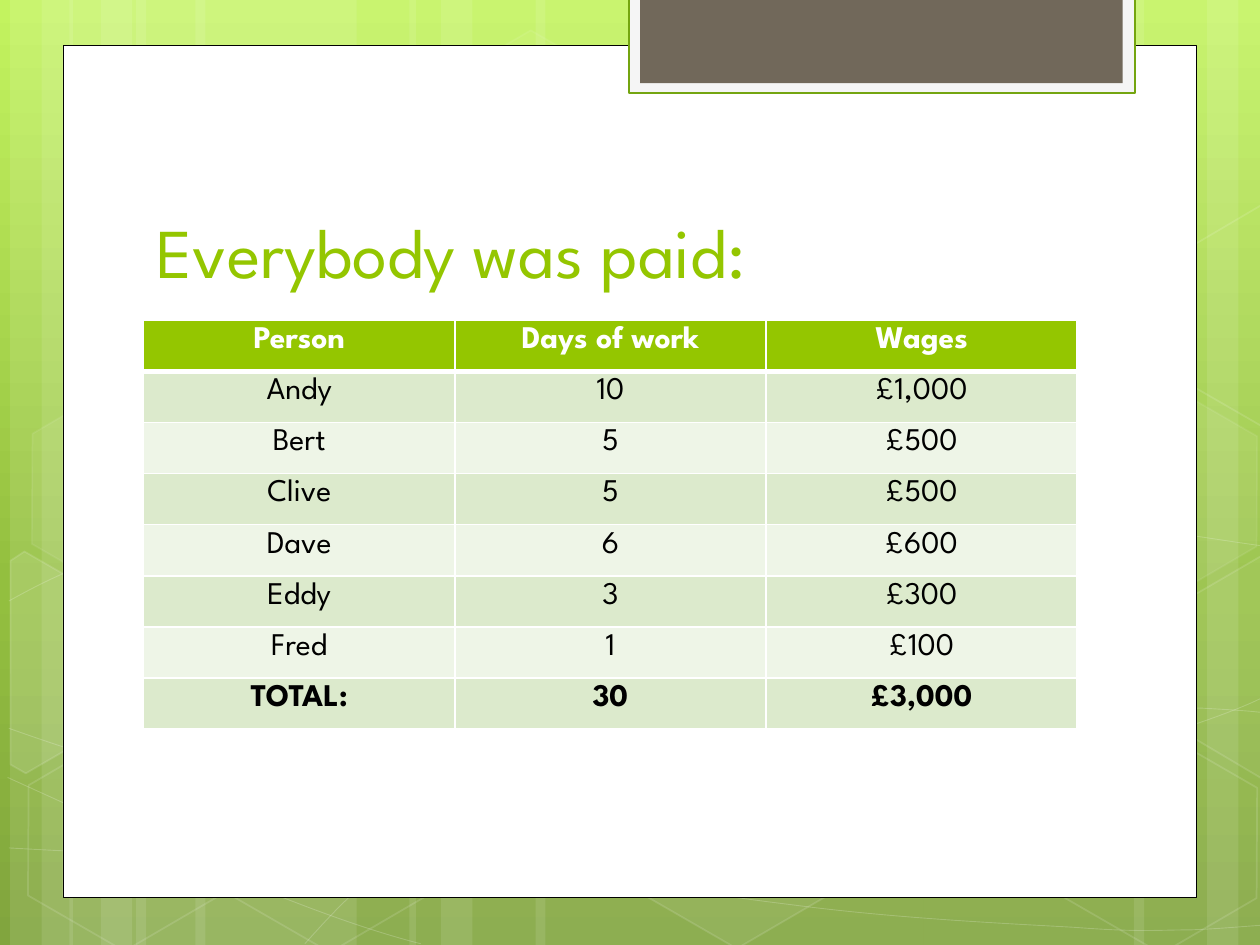
import copy
import math

import pptx
import pptx.dml.color
import pptx.enum.shapes
import pptx.enum.text
import pptx.oxml
import pptx.oxml.ns
import pptx.util

SCALE = 9144  # EMU per px, 100 px to the inch
FONT = "League Spartan"
COLOURS = {
    "white": "FFFFFF", "black": "000000", "green": "94C600", "outline": "74A510",
    "tab frame": "F5F5F5", "tab": "71685A", "odd row": "DCEACC", "even row": "EEF5E7",
    "sky": "C3F35F", "grass": "93BF3F", "moss": "81A53E",
}
RGB = {name: pptx.dml.color.RGBColor.from_string(value) for name, value in COLOURS.items()}
KINDS = pptx.enum.shapes.MSO_SHAPE
qn = pptx.oxml.ns.qn


def paint(shape, fill=None, line=None, width=1, fill_alpha=100, line_alpha=100):
    """Set fill and line by colour name; alpha is opacity in percent."""
    shape.shadow.inherit = False
    for target, colour, alpha in ((shape.fill, fill, fill_alpha),
                                  (shape.line.fill, line, line_alpha)):
        if colour is None:
            target.background()
            continue
        target.solid()
        target.fore_color.rgb = RGB[colour]
        if alpha < 100:
            holder = shape.element.spPr
            if target is not shape.fill:
                holder = holder.find(qn("a:ln"))
            rgb = holder.find(qn("a:solidFill")).find(qn("a:srgbClr"))
            rgb.append(pptx.oxml.parse_xml(
                f'<a:alpha {pptx.oxml.ns.nsdecls("a")} val="{alpha * 1000}"/>'))
    if line:
        shape.line.width = pptx.util.Pt(width)


def bend(shape):
    """Turn each three straight segments of an outline into one Bezier curve."""
    segments = list(shape.element.iter(qn("a:lnTo")))
    for first in range(0, len(segments), 3):
        curve = pptx.oxml.parse_xml(f'<a:cubicBezTo {pptx.oxml.ns.nsdecls("a")}/>')
        segments[first].addprevious(curve)
        for segment in segments[first:first + 3]:
            curve.append(segment[0])
            segment.getparent().remove(segment)


deck = pptx.Presentation()
deck.slide_width, deck.slide_height = 1000 * SCALE, 750 * SCALE
slide = deck.slides.add_slide(deck.slide_layouts[5])
shapes = slide.shapes

# Background gradient, top to bottom
backdrop = slide.background.fill
backdrop.gradient()
backdrop.gradient_angle = 270
stop_list = slide.element.find(".//" + qn("a:gsLst"))
stop_list.append(copy.deepcopy(stop_list[0]))
for stop, (position, colour) in zip(backdrop.gradient_stops,
                                    ((0, "sky"), (0.62, "grass"), (1, "moss"))):
    stop.position = position
    stop.color.rgb = RGB[colour]

# Vertical light stripes: left, width
for left, width in ((108, 175), (8, 50), (33, 83), (155, 175), (55, 50), (80, 83),
                    (733, 175), (958, 50), (900, 83), (425, 308), (325, 50), (350, 83)):
    stripe = shapes.add_shape(KINDS.RECTANGLE, left * SCALE, 0, width * SCALE, 750 * SCALE)
    paint(stripe, "white", fill_alpha=10)

# Thin sweeping curves: a start, then two control points and an end per curve
sweeps = (
    [(7, 673), (61, 676), (115, 679), (190, 678), (265, 677), (358, 675), (458, 665),
     (558, 655), (700, 636), (792, 617), (883, 598), (977, 568), (1007, 551)],
    [(7, 477), (36, 461), (65, 446), (121, 431), (178, 416), (259, 394), (347, 387),
     (436, 380), (544, 379), (654, 387), (764, 395), (947, 426), (1007, 434)],
    [(6, 617), (127, 672), (247, 727), (334, 749)],
    [(7, 578), (38, 589), (70, 600), (128, 616), (186, 631), (273, 656), (357, 673),
     (440, 690), (545, 708), (628, 718), (711, 729), (800, 733), (853, 736),
     (905, 740), (919, 738), (945, 738), (971, 737), (989, 735), (1007, 734)],
    [(242, 749), (260, 729), (278, 709), (302, 691), (326, 673), (360, 653), (388, 639),
     (416, 625), (433, 619), (470, 609), (506, 599), (573, 585), (608, 578),
     (644, 571), (649, 571), (680, 569), (711, 566), (760, 563), (794, 562),
     (829, 561), (886, 562), (886, 562), (886, 562), (953, 562), (953, 562),
     (971, 563), (988, 564), (997, 565), (1006, 566), (1003, 565), (1006, 566)],
)
for points in sweeps:
    pen = shapes.build_freeform(*points[0], scale=SCALE)
    pen.add_line_segments(points[1:], close=False)
    sweep = pen.convert_to_shape()
    bend(sweep)
    paint(sweep, line="white", width=0.5, line_alpha=20)

# Whole hexagons: left, top, fill opacity, line opacity
for left, top, fill_alpha, line_alpha in (
        (334, 36, 4, 8), (497, 589, 6, 12), (11, 591, 0, 12), (14, 312, 7, 8),
        (174, 592, 0, 12), (753, 453, 10, 12), (834, 593, 0, 12), (834, 314, 7, 8)):
    hexagon = shapes.add_shape(KINDS.HEXAGON, left * SCALE, top * SCALE,
                               175 * SCALE, 152 * SCALE)
    hexagon.rotation = 30
    hexagon.adjustments[0] = 0.285
    paint(hexagon, "white" if fill_alpha else None, "white", 1, fill_alpha, line_alpha)

# Hexagons cut by the slide edge: fill opacity, centre, corners as they stand when turned
cos, sin = math.cos(math.radians(30)), math.sin(math.radians(30))
for fill_alpha, (x0, y0), corners in (
        (10, (36, 535), [(8, 445), (19, 438), (96, 482), (95, 570), (20, 614), (8, 607)]),
        (4, (985, 520),
         [(926, 485), (1001, 441), (1009, 446), (1009, 613), (1002, 617), (926, 573)]),
        (0, (985, 241),
         [(926, 207), (1001, 163), (1010, 168), (1009, 335), (1002, 339), (926, 295)])):
    level = [(x0 + (x - x0) * cos + (y - y0) * sin, y0 + (y - y0) * cos - (x - x0) * sin)
             for x, y in corners]
    pen = shapes.build_freeform(*level[0], scale=SCALE)
    pen.add_line_segments(level[1:], close=True)
    cut_hexagon = pen.convert_to_shape()
    cut_hexagon.rotation = 30
    paint(cut_hexagon, "white" if fill_alpha else None, "white", 1, fill_alpha, 12)

# White card and the tab hanging over its top edge
for box, style in (
        ((50, 36, 900, 676), {"fill": "white", "line": "black", "width": 0.5}),
        ((499, -2, 402, 76), {"fill": "tab frame", "line": "outline", "width": 1.25}),
        ((508, -2, 383, 68), {"fill": "tab"})):
    panel = shapes.add_shape(KINDS.RECTANGLE, *(length * SCALE for length in box))
    paint(panel, **style)

# Title, brought in front of the card
title = shapes.title
shapes.element.append(title.element)
for side, length in {"left": 114, "top": 112, "width": 768, "height": 125}.items():
    setattr(title, side, length * SCALE)
title.text_frame.text = "Everybody was paid:"
title.text_frame.vertical_anchor = pptx.enum.text.MSO_ANCHOR.BOTTOM
heading = title.text_frame.paragraphs[0]
heading.alignment = pptx.enum.text.PP_ALIGN.LEFT
for key, value in {"name": FONT, "size": pptx.util.Pt(40), "bold": False}.items():
    setattr(heading.runs[0].font, key, value)
heading.runs[0].font.color.rgb = RGB["green"]

# Wages table
wages = (
    ("Person", "Days of work", "Wages"),
    ("Andy", "10", "£1,000"),
    ("Bert", "5", "£500"),
    ("Clive", "5", "£500"),
    ("Dave", "6", "£600"),
    ("Eddy", "3", "£300"),
    ("Fred", "1", "£100"),
    ("TOTAL:", "30", "£3,000"),
)
table = shapes.add_table(len(wages), 3, 114 * SCALE, 254 * SCALE,
                         741 * SCALE, 325 * SCALE).table
for row, entries in enumerate(wages):
    is_header = row == 0
    row_fill = "green" if is_header else "odd row" if row % 2 else "even row"
    cell_font = {"name": FONT, "size": pptx.util.Pt(18),
                 "bold": row in (0, len(wages) - 1)}
    borders = {"L": 1, "R": 1, "T": 3 if row == 1 else 1, "B": 3 if is_header else 1}
    for column, entry in enumerate(entries):
        cell = table.cell(row, column)
        properties = cell._tc.get_or_add_tcPr()
        for side, points in borders.items():
            properties.append(pptx.oxml.parse_xml(
                f'<a:ln{side} {pptx.oxml.ns.nsdecls("a")} w="{points * 12700}"><a:solidFill>'
                f'<a:srgbClr val="{COLOURS["white"]}"/></a:solidFill></a:ln{side}>'))
        cell.fill.solid()
        cell.fill.fore_color.rgb = RGB[row_fill]
        cell.text = entry
        paragraph = cell.text_frame.paragraphs[0]
        paragraph.alignment = pptx.enum.text.PP_ALIGN.CENTER
        for key, value in cell_font.items():
            setattr(paragraph.runs[0].font, key, value)
        paragraph.runs[0].font.color.rgb = RGB["white" if is_header else "black"]

deck.save("out.pptx")
